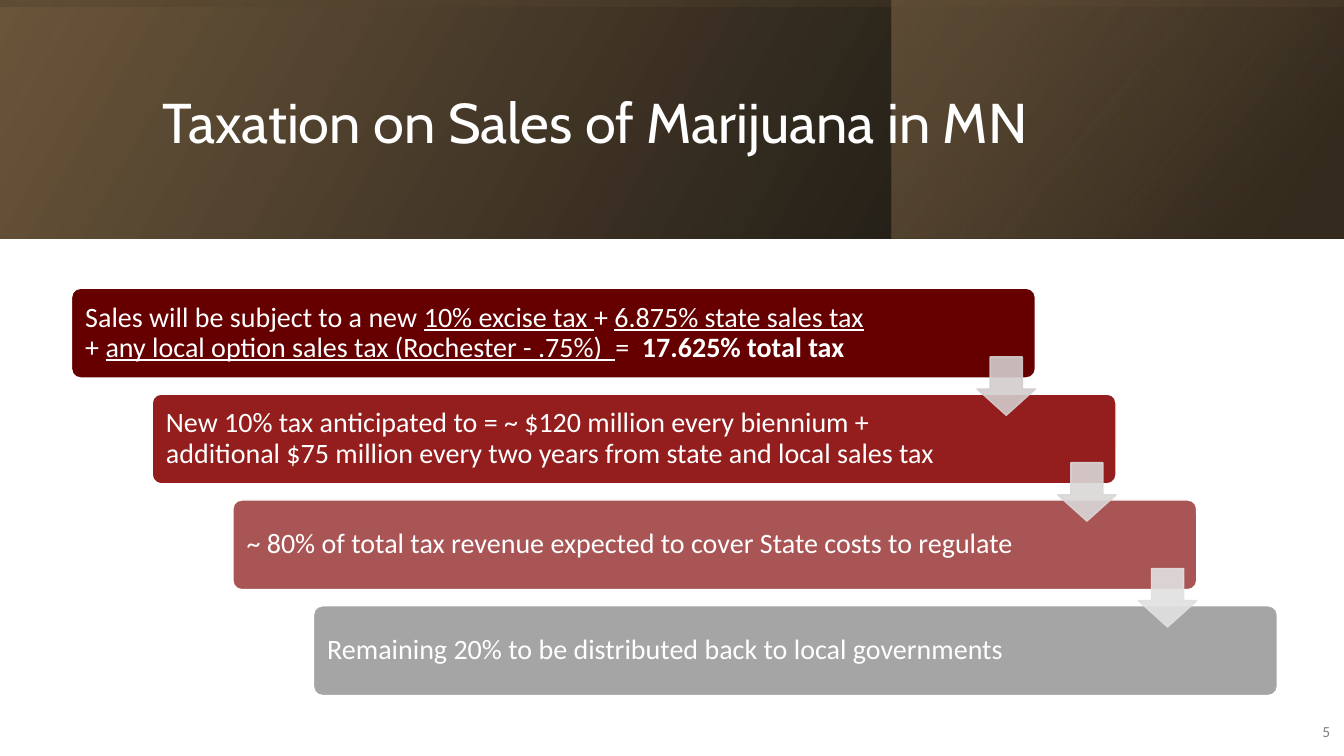
from dataclasses import dataclass

from pptx import Presentation
from pptx import util as u
from pptx.dml.color import RGBColor
from pptx.enum import shapes, text
from pptx.oxml import parse_xml
from pptx.oxml.ns import nsdecls, qn

EMU_PER_PX = 9144  # 100 px to the inch


def px(length):
    return u.Emu(length * EMU_PER_PX)


@dataclass(frozen=True)
class Theme:
    title_font: str = "Cabin"
    body_font: str = "Calibri"
    title_size: int = 40
    body_size: int = 20
    number_size: int = 11
    white: str = "FFFFFF"
    black: str = "000000"
    brown: str = "6B563B"
    dark_brown: str = "483A28"
    light_brown: str = "8F734F"
    number_grey: str = "808080"
    steps: tuple = ("660000", "941E1E", "A95555", "A5A5A5")
    arrows: tuple = ("D3CCCC", "DAD7D7", "E1E1E1")


class SlideBuilder:
    def __init__(self, slide, theme):
        self.slide = slide
        self.theme = theme

    def shape(self, kind, left, top, width, height, adjustments=()):
        shape = self.slide.shapes.add_shape(
            kind, px(left), px(top), px(width), px(height))
        shape.shadow.inherit = False
        for index, value in enumerate(adjustments):
            shape.adjustments[index] = value
        return shape

    def paint(self, fill, color, opacity=100):
        """Set a solid colour on a fill, with its opacity in percent."""
        fill.solid()
        fill.fore_color.rgb = RGBColor.from_string(color)
        if opacity < 100:
            clr = fill._xPr.find(f".//{qn('a:srgbClr')}")
            clr.append(parse_xml(
                f'<a:alpha {nsdecls("a")} val="{opacity * 1000}"/>'))

    def gradient_panel(self, left, top, width, height, stops, angle, rotation=0):
        """Mirrored rectangle; stops are (position, colour, opacity) in percent."""
        panel = self.shape(shapes.MSO_SHAPE.RECTANGLE, left, top, width, height)
        panel.rotation = rotation
        panel.line.fill.background()
        panel.fill.background()
        properties = panel.element.spPr
        properties.find(qn("a:xfrm")).set("flipH", "1")
        stop_xml = "".join(
            f'<a:gs pos="{position * 1000}"><a:srgbClr val="{color}">'
            f'<a:alpha val="{opacity * 1000}"/></a:srgbClr></a:gs>'
            for position, color, opacity in stops)
        gradient = parse_xml(
            f'<a:gradFill {nsdecls("a")} rotWithShape="1"><a:gsLst>{stop_xml}</a:gsLst>'
            f'<a:lin ang="{angle * 60000}" scaled="0"/></a:gradFill>')
        properties.replace(properties.find(qn("a:noFill")), gradient)

    def style(self, paragraph, font, size, color, align=text.PP_ALIGN.LEFT):
        paragraph.alignment = align
        paragraph.font.name = font
        paragraph.font.size = u.Pt(size)
        paragraph.font.color.rgb = RGBColor.from_string(color)

    def title(self, words, left, top, width, height):
        title = self.slide.shapes.title
        title.left, title.top = px(left), px(top)
        title.width, title.height = px(width), px(height)
        frame = title.text_frame
        frame.text = words
        frame.word_wrap = True
        frame.auto_size = text.MSO_AUTO_SIZE.NONE
        frame.vertical_anchor = text.MSO_ANCHOR.MIDDLE
        paragraph = frame.paragraphs[0]
        paragraph.line_spacing = 0.9
        self.style(paragraph, self.theme.title_font, self.theme.title_size,
                   self.theme.white)
        self.slide.shapes._spTree.append(title.element)  # in front of the banner

    def page_number(self, number, left, top, width, height):
        box = self.slide.shapes.add_textbox(px(left), px(top), px(width), px(height))
        frame = box.text_frame
        frame.word_wrap = True
        frame.vertical_anchor = text.MSO_ANCHOR.MIDDLE
        frame.text = number
        self.style(frame.paragraphs[0], self.theme.body_font, self.theme.number_size,
                   self.theme.number_grey, text.PP_ALIGN.RIGHT)

    def step(self, runs, color, left, top, width, height):
        """Rounded bar; runs are (words, mark), mark being "", "u" or "b"."""
        bar = self.shape(shapes.MSO_SHAPE.ROUNDED_RECTANGLE,
                         left, top, width, height, [0.1])
        self.paint(bar.fill, color)
        self.paint(bar.line.fill, self.theme.white)
        bar.line.width = u.Pt(1)
        frame = bar.text_frame
        frame.word_wrap = True
        frame.vertical_anchor = text.MSO_ANCHOR.MIDDLE
        frame.margin_left, frame.margin_right = px(11), px(148)
        frame.margin_top = frame.margin_bottom = px(8)
        paragraph = frame.paragraphs[0]
        paragraph.line_spacing = 0.9
        self.style(paragraph, self.theme.body_font, self.theme.body_size,
                   self.theme.white)
        for words, mark in runs:
            run = paragraph.add_run()
            run.text = words
            if mark == "u":
                run.font.underline = True
            elif mark == "b":
                run.font.bold = True

    def arrow(self, color, left, top, size):
        arrow = self.shape(shapes.MSO_SHAPE.DOWN_ARROW,
                           left, top, size, size, [0.55, 0.45])
        self.paint(arrow.fill, color, 90)
        self.paint(arrow.line.fill, color, 90)
        arrow.line.width = u.Pt(1)


STEPS = [
    [("Sales will be subject to a new ", ""), ("10% excise tax ", "u"), ("+ ", ""),
     ("6.875% state sales tax ", "u"), ("+ ", ""),
     ("any local option sales tax (Rochester - .75%)  ", "u"), ("=  ", ""),
     ("17.625% total tax", "b")],
    [("New 10% tax anticipated to = ~ $120 million every biennium + "
      "additional $75 million every two years from state and local sales tax", "")],
    [("~ 80% of total tax revenue expected to cover State costs to regulate", "")],
    [("Remaining 20% to be distributed back to local governments", "")],
]


def main():
    presentation = Presentation()
    presentation.slide_width, presentation.slide_height = px(1333), px(750)
    theme = Theme()
    slide = presentation.slides.add_slide(presentation.slide_layouts[5])
    builder = SlideBuilder(slide, theme)

    builder.gradient_panel(0, 0, 1333, 237,
                           [(0, theme.black, 96), (100, theme.brown, 100)], 330)
    builder.gradient_panel(884, 0, 449, 237,
                           [(19, theme.dark_brown, 68), (100, theme.light_brown, 48)], 320)
    builder.gradient_panel(548, -548, 237, 1333,
                           [(23, theme.brown, 16), (99, theme.black, 45)], 350, 270)
    builder.title("Taxation on Sales of Marijuana in MN", 151, 38, 1063, 172)
    builder.page_number("5", 1280, 706, 49, 40)

    corners = [(71 + 80 * index, 286 + 105 * index) for index in range(len(STEPS))]
    for runs, color, (left, top) in zip(STEPS, theme.steps, corners):
        builder.step(runs, color, left, top, 956, 89)
    for color, (left, top) in zip(theme.arrows, corners):
        builder.arrow(color, left + 898, top + 68, 58)

    presentation.save("out.pptx")


if __name__ == "__main__":
    main()
